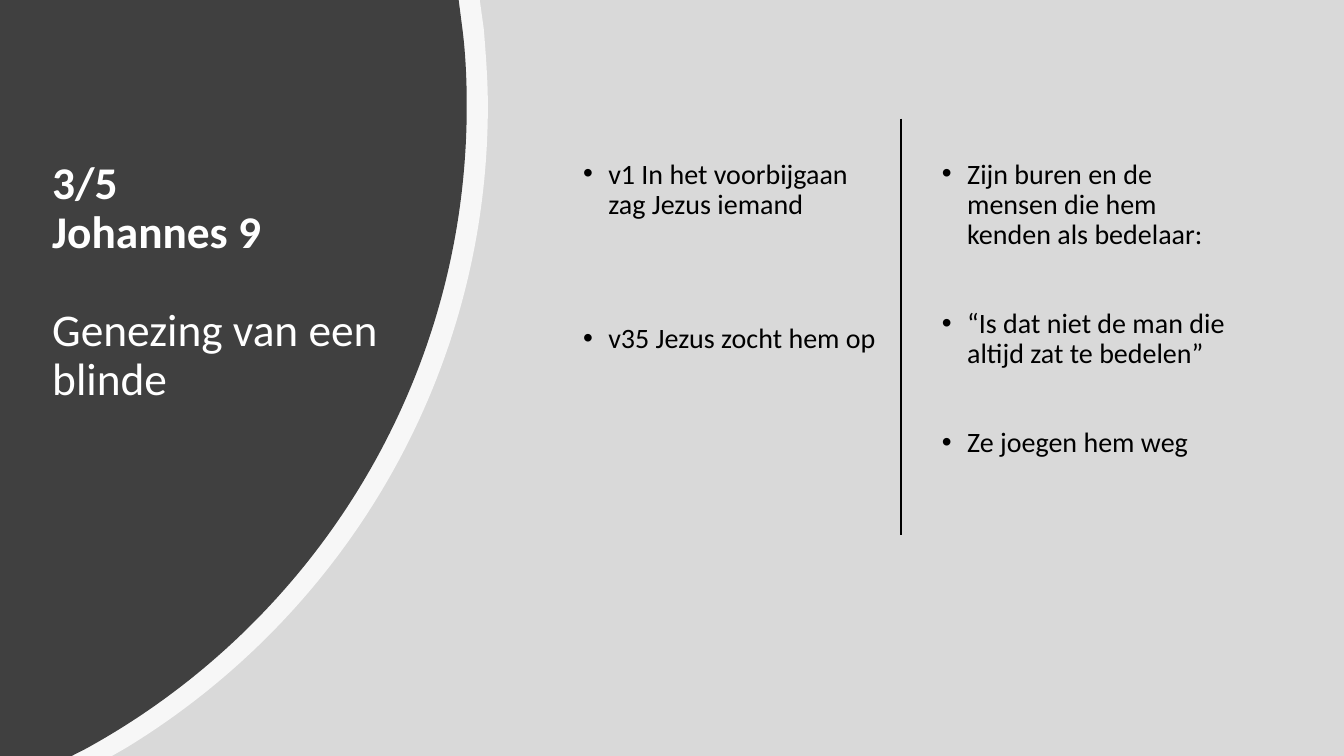
from lxml.etree import SubElement
from pptx import Presentation
from pptx.dml.color import RGBColor
from pptx.enum.shapes import MSO_CONNECTOR, MSO_SHAPE
from pptx.oxml.ns import qn
from pptx.util import Inches, Pt

FONT = "Calibri"
TITLE = [("3/5\vJohannes 9 \v\v", True), ("Genezing van een blinde", False)]
LISTS = [
    (42.65, 74, ["v1 In het voorbijgaan zag Jezus iemand",
                 "v35 Jezus zocht hem op"]),
    (69.35, 42, ["Zijn buren en de mensen die hem kenden als bedelaar:",
                 "“Is dat niet de man die altijd zat te bedelen”",
                 "Ze joegen hem weg"]),
]
DISCS = [
    ("FFFFFF", 80,
     [(35.7, 0), (36, 3.87),
      (36.15, 7.2), (36.3, 10.67), (36.3, 14),
      (36.3, 50), (25.5, 81.47), (9.38, 98.93),
      (8.33, 100), (0, 100)]),
    ("404040", 100,
     [(34.13, 0), (34.43, 4.13),
      (34.65, 7.33), (34.73, 10.67), (34.73, 14),
      (34.73, 50.8), (23.18, 82.8), (6.23, 99.2),
      (5.33, 100), (0, 100)]),
]
BENDS = (2, 5)
TOP = 20.5

deck = Presentation()
deck.slide_width, deck.slide_height = Inches(13.333), Inches(7.5)
slide = deck.slides.add_slide(deck.slide_layouts[6])
shapes = slide.shapes


def spot(x, y):
    """Turn percentages of the slide into lengths."""
    return round(deck.slide_width * x / 100), round(deck.slide_height * y / 100)


def tint(code):
    """Read a hex colour."""
    return RGBColor.from_string(code)


def paint(shape, code, alpha=100):
    """Fill a shape plainly, without line or shadow."""
    shape.shadow.inherit = False
    shape.line.fill.background()
    shape.fill.solid()
    shape.fill.fore_color.rgb = tint(code)
    if alpha < 100:
        tone = shape._element.spPr.find(qn("a:solidFill"))[0]
        SubElement(tone, qn("a:alpha"), val=str(alpha * 1000))


def disc(code, alpha, edge):
    """Draw the part of a disc on the slide, bending its round stretches."""
    form = shapes.build_freeform(0, 0)
    form.add_line_segments([spot(*point) for point in edge], close=True)
    shape = form.convert_to_shape()
    sides = list(shape._element.iter(qn("a:lnTo")))
    for n in BENDS:
        trio = sides[n:n + 3]
        bend = trio[0].makeelement(qn("a:cubicBezTo"))
        trio[0].addprevious(bend)
        for side in trio:
            bend.append(side[0])
            side.getparent().remove(side)
    paint(shape, code, alpha)


def box(x, wide, high):
    """Add a wrapping text frame at the common top."""
    frame = shapes.add_textbox(*spot(x, TOP), *spot(wide, high)).text_frame
    frame.word_wrap = True
    return frame


def para(frame, first, gap):
    """Start a paragraph with the common line spacing."""
    item = frame.paragraphs[0] if first else frame.add_paragraph()
    item.line_spacing = 0.9
    item.space_before = Pt(gap)
    return item


def style(font, size, code, bold):
    """Set the look of a run."""
    font.name, font.size, font.bold = FONT, Pt(size), bold
    font.color.rgb = tint(code)


def write(item, text, size, code, bold=False):
    """Add text to a paragraph, breaking lines at each tab mark."""
    for n, line in enumerate(text.split("\v")):
        if n:
            item.add_line_break()
            mark = item._p[-1]
            SubElement(mark, qn("a:rPr"), sz=str(round(size * 100)))
        if line:
            run = item.add_run()
            run.text = line
            style(run.font, size, code, bold)


def bullet(item):
    """Give a paragraph a hanging bullet."""
    props = item._p.get_or_add_pPr()
    props.set("marL", str(Inches(0.25)))
    props.set("indent", str(-Inches(0.25)))
    SubElement(props, qn("a:buFont"), typeface="Arial")
    SubElement(props, qn("a:buChar"), char="•")


paint(shapes.add_shape(MSO_SHAPE.RECTANGLE, 0, 0, *spot(100, 100)), "D9D9D9")
for part in DISCS:
    disc(*part)

head = para(box(3.15, 27, 31.5), True, 0)
for text, bold in TITLE:
    write(head, text, 32.4, "FFFFFF", bold)

for x, gap, points in LISTS:
    body = box(x, 24, 63.6)
    for n, point in enumerate(points):
        item = para(body, n == 0, gap if n else 10)
        bullet(item)
        write(item, point, 20, "000000")

rule = shapes.add_connector(MSO_CONNECTOR.STRAIGHT,
                            *spot(67.05, 15.7), *spot(67.05, 70.8))
rule.line.color.rgb = tint("000000")
rule.line.width = Pt(1.5)
SubElement(rule._element.spPr, qn("a:effectLst"))

deck.save("out.pptx")
